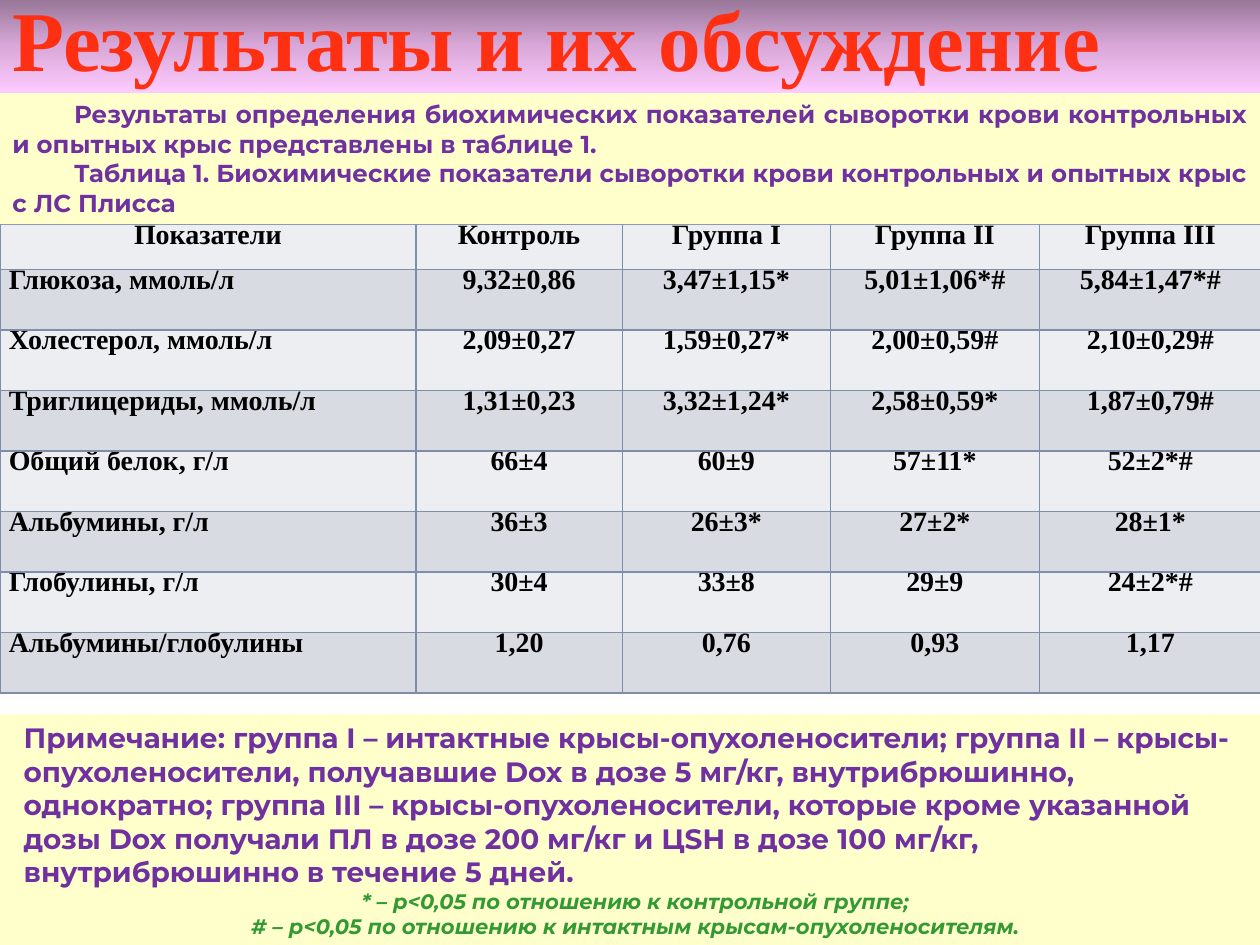
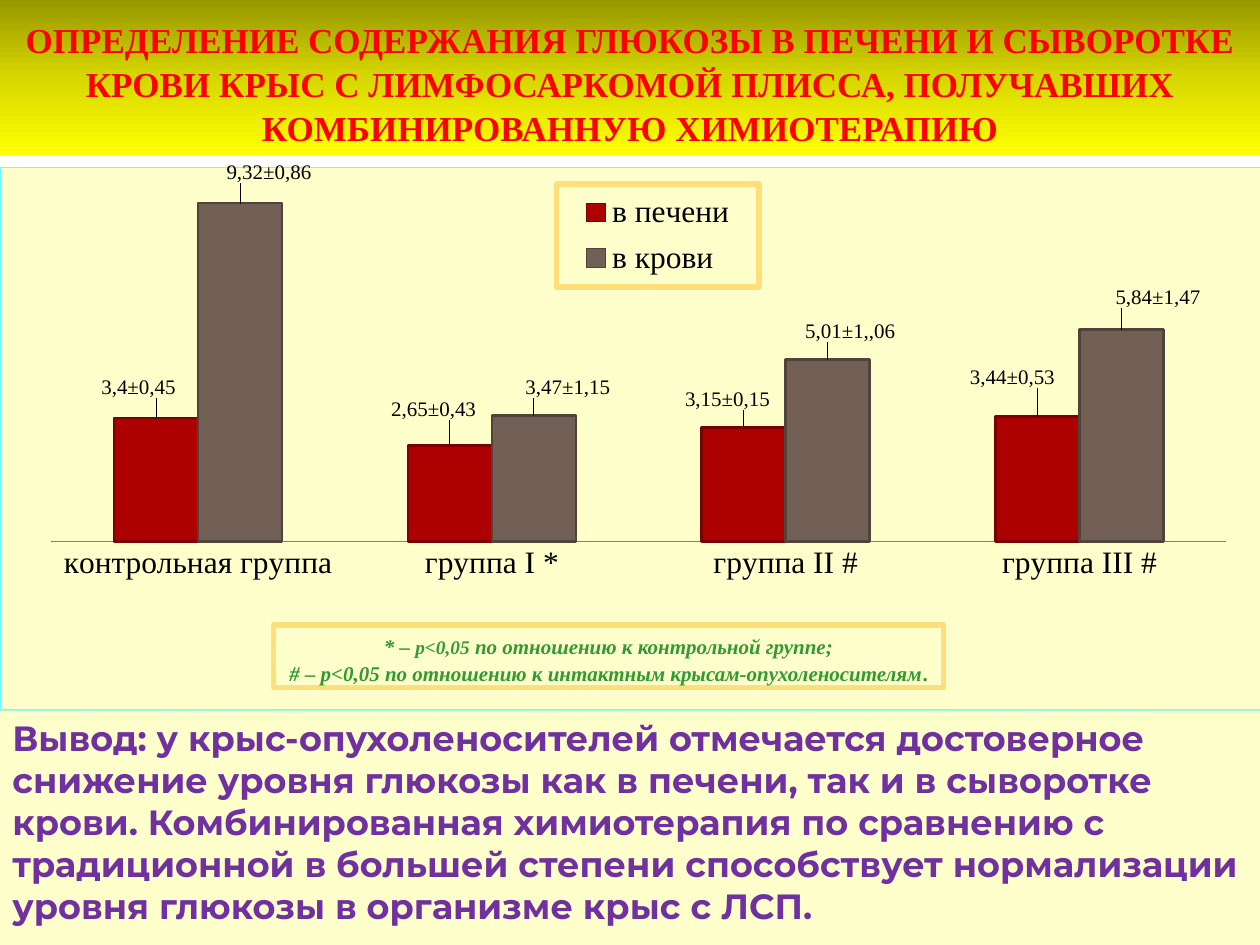
"""Build two slides on the blood biochemistry and glucose of rats."""
import copy

import pptx
import pptx.chart.data
import pptx.dml.color
import pptx.enum.chart
import pptx.enum.shapes
import pptx.enum.text
import pptx.oxml
import pptx.oxml.ns
import pptx.util

Inches = pptx.util.Inches
Pt = pptx.util.Pt
qn = pptx.oxml.ns.qn
ALIGN = pptx.enum.text.PP_ALIGN

COLORS = {
    "cream": "FFFFCC", "purple": "7030A0", "green": "339933", "gold": "FFDF79",
    "red": "FF0000", "orange": "FF2F12", "black": "000000",
    "row_light": "EDEEF1", "row_dark": "D8DBE2", "grid": "808DA9",
    "liver": "AD0101", "liver_edge": "7A0101", "blood": "726056",
    "blood_edge": "50433C", "chart_edge": "66FFFF", "axis": "808080",
}
PINK_BAND = ("997799", "DAA9DA", "FFCCFF")
YELLOW_BAND = ("979700", "D7D700", "FFFF00")

SERIF = {"name": "Times New Roman", "bold": True}
SANS = {"name": "Montserrat", "bold": True, "color": "purple"}
TABLE_FONT = {**SERIF, "size": Pt(16), "color": "black"}
SIGN_SANS = {**SANS, "size": Pt(12), "color": "green", "italic": True}
SIGN_SERIF = {**SERIF, "size": Pt(12), "color": "green", "italic": True}

TABLE_ROWS = [
    ("Показатели", "Контроль", "Группа І", "Группа ІІ", "Группа ІІІ"),
    ("Глюкоза, ммоль/л", "9,32±0,86", "3,47±1,15*", "5,01±1,06*#", "5,84±1,47*#"),
    ("Холестерол, ммоль/л", "2,09±0,27", "1,59±0,27*", "2,00±0,59#", "2,10±0,29#"),
    ("Триглицериды, ммоль/л", "1,31±0,23", "3,32±1,24*", "2,58±0,59*", "1,87±0,79#"),
    ("Общий белок, г/л", "66±4", "60±9", "57±11*", "52±2*#"),
    ("Альбумины, г/л", "36±3", "26±3*", "27±2*", "28±1*"),
    ("Глобулины, г/л", "30±4", "33±8", "29±9", "24±2*#"),
    ("Альбумины/глобулины", "1,20", "0,76", "0,93", "1,17"),
]
COLUMN_WIDTHS = (3.3, 1.64, 1.65, 1.66, 1.76)

GROUPS = ("контрольная группа", "группа I *", "группа II #", "группа III #")
# Each label: text, shift right and shift down in inches.
GLUCOSE = [
    ("в печени", "liver", (3.4, 2.65, 3.15, 3.44),
     (("3,4±0,45", -0.14, -0.12), ("2,65±0,43", -0.13, -0.16),
      ("3,15±0,15", -0.13, -0.1), ("3,44±0,53", -0.2, -0.19))),
    ("в крови", "blood", (9.32, 3.47, 5.01, 5.84),
     (("9,32±0,86", 0.23, -0.12), ("3,47±1,15", 0.27, -0.1),
      ("5,01±1,,06", 0.18, -0.1), ("5,84±1,47", 0.29, -0.13))),
]
CHART_BOX = (0, 1.28, 10.04, 4.36)

INTRO = [
    "Результаты определения биохимических показателей сыворотки крови "
    "контрольных и опытных крыс представлены в таблице 1.",
    "Таблица 1. Биохимические показатели сыворотки крови контрольных и "
    "опытных крыс с ЛС Плисса",
]
NOTE = (
    "Примечание: группа I – интактные крысы-опухоленосители; группа II – "
    "крысы-опухоленосители, получавшие Dox в дозе 5 мг/кг, внутрибрюшинно, "
    "однократно; группа III – крысы-опухоленосители, которые кроме указанной "
    "дозы Dox получали ПЛ в дозе 200 мг/кг и ЦSH в дозе 100 мг/кг, "
    "внутрибрюшинно в течение 5 дней."
)
P_VALUE = "p<0,05"
VS_CONTROL = " по отношению к контрольной группе;"
VS_INTACT = f"# – {P_VALUE} по отношению к интактным крысам-опухоленосителям"
GLUCOSE_TITLE = (
    "ОПРЕДЕЛЕНИЕ СОДЕРЖАНИЯ ГЛЮКОЗЫ В ПЕЧЕНИ И СЫВОРОТКЕ КРОВИ КРЫС С "
    "ЛИМФОСАРКОМОЙ ПЛИССА, ПОЛУЧАВШИХ КОМБИНИРОВАННУЮ ХИМИОТЕРАПИЮ"
)
CONCLUSION = (
    "Вывод: у крыс-опухоленосителей отмечается достоверное снижение уровня "
    "глюкозы как в печени, так и в сыворотке крови. Комбинированная "
    "химиотерапия по сравнению с традиционной в большей степени способствует "
    "нормализации уровня глюкозы в организме крыс с ЛСП."
)


def rgb(name):
    """Return the colour for a palette name or a hex string."""
    return pptx.dml.color.RGBColor.from_string(COLORS.get(name, name))


def set_format(obj, values):
    """Set each attribute of a format object, resolving its colour."""
    for key, value in values.items():
        if key == "color":
            obj.color.rgb = rgb(value)
        else:
            setattr(obj, key, value)


def paint(fill, color):
    """Give a fill one solid colour."""
    fill.solid()
    fill.fore_color.rgb = rgb(color)


def write(p, runs, align=ALIGN.LEFT, spacing=None, margin=0, indent=0):
    """Fill a paragraph with (text, font values) runs."""
    set_format(p, {"alignment": align, "line_spacing": spacing})
    pPr = p._p.get_or_add_pPr()
    pPr.set("marL", str(Inches(margin)))
    pPr.set("indent", str(Inches(indent)))
    for text, font in runs:
        r = p.add_run()
        r.text = text
        set_format(r.font, font)


def add_box(slide, box, paragraphs, fill="cream", line=None, wrap=True, anchor="TOP"):
    """Add a rectangle with text; each paragraph is (runs, options)."""
    s = slide.shapes.add_shape(
        pptx.enum.shapes.MSO_SHAPE.RECTANGLE, *map(Inches, box))
    s.shadow.inherit = False
    paint(s.fill, fill)
    if line:
        set_format(s.line, {"color": line, "width": Pt(3)})
    else:
        s.line.fill.background()
    tf = s.text_frame
    set_format(tf, {"word_wrap": wrap,
                    "vertical_anchor": pptx.enum.text.MSO_ANCHOR[anchor]})
    for i, (runs, options) in enumerate(paragraphs):
        write(tf.add_paragraph() if i else tf.paragraphs[0], runs, **options)
    return s


def add_title(slide, text, height, stops, font, **options):
    """Add the full-width title band with a vertical gradient."""
    s = add_box(slide, (0, 0, 10, height), [([(text, {**SERIF, **font})], options)],
                anchor="BOTTOM")
    s.fill.gradient()
    s.fill.gradient_angle = 270
    first = s._element.spPr.find(".//" + qn("a:gs"))
    first.addnext(copy.deepcopy(first))
    for i, (stop, color) in enumerate(zip(s.fill.gradient_stops, stops)):
        set_format(stop, {"position": i / 2, "color": color})


def line_xml(tag, color, width):
    """Return a solid line element of the given tag."""
    return pptx.oxml.parse_xml(
        f'<a:{tag} {pptx.oxml.ns.nsdecls("a")} w="{Pt(width)}"><a:solidFill>'
        f'<a:srgbClr val="{COLORS[color]}"/></a:solidFill></a:{tag}>')


def add_results_table(slide):
    """Add the table of biochemical values."""
    frame = slide.shapes.add_table(
        len(TABLE_ROWS), len(COLUMN_WIDTHS), *map(Inches, (0, 1.78, 10, 3.7)))
    table = frame.table
    for column, width in zip(table.columns, COLUMN_WIDTHS):
        column.width = Inches(width)
    for i, values in enumerate(TABLE_ROWS):
        table.rows[i].height = Inches(0.48 if i else 0.36)
        for j, value in enumerate(values):
            cell = table.cell(i, j)
            set_format(cell, {"margin_left": Inches(0.07), "margin_right": Inches(0.07),
                              "margin_top": 0, "margin_bottom": 0})
            paint(cell.fill, "row_dark" if i % 2 else "row_light")
            for k, tag in enumerate(("lnL", "lnR", "lnT", "lnB")):
                cell._tc.tcPr.insert(k, line_xml(tag, "grid", 1))
            align = ALIGN.LEFT if i and not j else ALIGN.CENTER
            write(cell.text_frame.paragraphs[0], [(value, TABLE_FONT)], align, 0.8)


def set_layout(element, index, inner=False, edge=True, **fractions):
    """Place a chart part by fractions of the chart size."""
    for old in element.findall(qn("c:layout")):
        element.remove(old)
    parts = '<c:layoutTarget val="inner"/>' if inner else ""
    if edge:
        parts += '<c:xMode val="edge"/><c:yMode val="edge"/>'
    parts += "".join(f'<c:{k} val="{v:.4f}"/>' for k, v in fractions.items())
    element.insert(index, pptx.oxml.parse_xml(
        f'<c:layout {pptx.oxml.ns.nsdecls("c")}><c:manualLayout>{parts}'
        f'</c:manualLayout></c:layout>'))


def box_format(line, width):
    """Return cream shape properties with a coloured border."""
    spPr = pptx.oxml.parse_xml(
        f'<c:spPr {pptx.oxml.ns.nsdecls("c", "a")}><a:solidFill>'
        f'<a:srgbClr val="{COLORS["cream"]}"/></a:solidFill></c:spPr>')
    spPr.append(line_xml("ln", line, width))
    return spPr


def style_series(series, color, labels):
    """Colour one series and place its data labels."""
    paint(series.format.fill, color)
    set_format(series.format.line, {"color": color + "_edge", "width": Pt(1.5)})
    series.invert_if_negative = False
    set_format(series.data_labels, {"show_value": True})
    series.data_labels.font.size = Pt(12)
    for i, (text, _, _) in enumerate(labels):
        label = series.points[i].data_label
        write(label.text_frame.paragraphs[0], [(text, {"size": Pt(12)})], ALIGN.CENTER)
        label.position = pptx.enum.chart.XL_LABEL_POSITION.OUTSIDE_END
    for element, (_, dx, dy) in zip(series._element.iter(qn("c:dLbl")), labels):
        set_layout(element, 1, edge=False, x=dx / CHART_BOX[2], y=dy / CHART_BOX[3])


def add_glucose_chart(slide):
    """Add the column chart of glucose in liver and blood."""
    data = pptx.chart.data.CategoryChartData()
    data.categories = GROUPS
    for name, _, values, _ in GLUCOSE:
        data.add_series(name, values)
    chart = slide.shapes.add_chart(
        pptx.enum.chart.XL_CHART_TYPE.COLUMN_CLUSTERED,
        *map(Inches, CHART_BOX), data).chart
    set_format(chart, {"has_title": False, "has_legend": True})
    set_format(chart.font, {"name": SERIF["name"], "size": Pt(18), "color": "black"})
    plot = chart.plots[0]
    set_format(plot, {"gap_width": 150, "overlap": 0, "vary_by_categories": False})
    for series, (_, color, _, labels) in zip(plot.series, GLUCOSE):
        style_series(series, color, labels)
    set_format(chart.value_axis, {"visible": False, "has_major_gridlines": False,
                                  "minimum_scale": 0, "maximum_scale": 10})
    chart.category_axis.major_tick_mark = pptx.enum.chart.XL_TICK_MARK.NONE
    set_format(chart.category_axis.format.line, {"color": "axis", "width": Pt(0.75)})
    set_format(chart.legend, {"position": pptx.enum.chart.XL_LEGEND_POSITION.RIGHT,
                              "include_in_layout": False})
    legend = chart.legend._element
    set_layout(legend, 1, x=0.44, y=0.03, w=0.16, h=0.19)
    legend.append(box_format("gold", 3))
    root = chart._chartSpace
    set_layout(root.find(".//" + qn("c:plotArea")), 0, inner=True,
               x=0.04, y=0.02, w=0.93, h=0.67)
    root.find(qn("c:chart")).addnext(box_format("chart_edge", 0.75))


def build_results_slide(slide):
    """Build the slide with the table of results."""
    add_title(slide, "Результаты и их обсуждение", 0.75, PINK_BAND,
              {"size": Pt(48.6), "color": "orange"})
    add_results_table(slide)
    add_box(slide, (0, 0.74, 10, 1.04),
            [([(text, {**SANS, "size": Pt(14)})],
              {"align": ALIGN.JUSTIFY, "indent": 0.49}) for text in INTRO])
    signs = [f"* – {P_VALUE}{VS_CONTROL}", VS_INTACT + "."]
    add_box(slide, (0, 5.67, 10, 1.85),
            [([(NOTE, {**SANS, "size": Pt(16)})], {"margin": 0.09})]
            + [([(text, SIGN_SANS)], {"align": ALIGN.CENTER, "margin": 0.09})
               for text in signs])


def build_glucose_slide(slide):
    """Build the slide with the glucose chart and the conclusion."""
    add_title(slide, GLUCOSE_TITLE, 1.23, YELLOW_BAND,
              {"size": Pt(20), "color": "red"}, align=ALIGN.CENTER, spacing=1.05)
    add_glucose_chart(slide)
    centred = {"align": ALIGN.CENTER, "spacing": 1.08}
    add_box(slide, (2.17, 4.96, 5.32, 0.5), [
        ([("* – ", SIGN_SERIF), (P_VALUE, {**SIGN_SERIF, "size": Pt(11)}),
          (VS_CONTROL, SIGN_SERIF)], centred),
        ([(VS_INTACT, SIGN_SERIF), (".", {**SIGN_SERIF, "italic": False})], centred),
    ], line="gold", wrap=False)
    add_box(slide, (0, 5.64, 10, 2.09), [([(CONCLUSION, {**SANS, "size": Pt(20)})], {})])


def main():
    """Create the presentation and save it."""
    prs = pptx.Presentation()
    prs.slide_width, prs.slide_height = Inches(10), Inches(7.5)
    for build in (build_results_slide, build_glucose_slide):
        build(prs.slides.add_slide(prs.slide_layouts[6]))
    prs.save("out.pptx")


if __name__ == "__main__":
    main()
